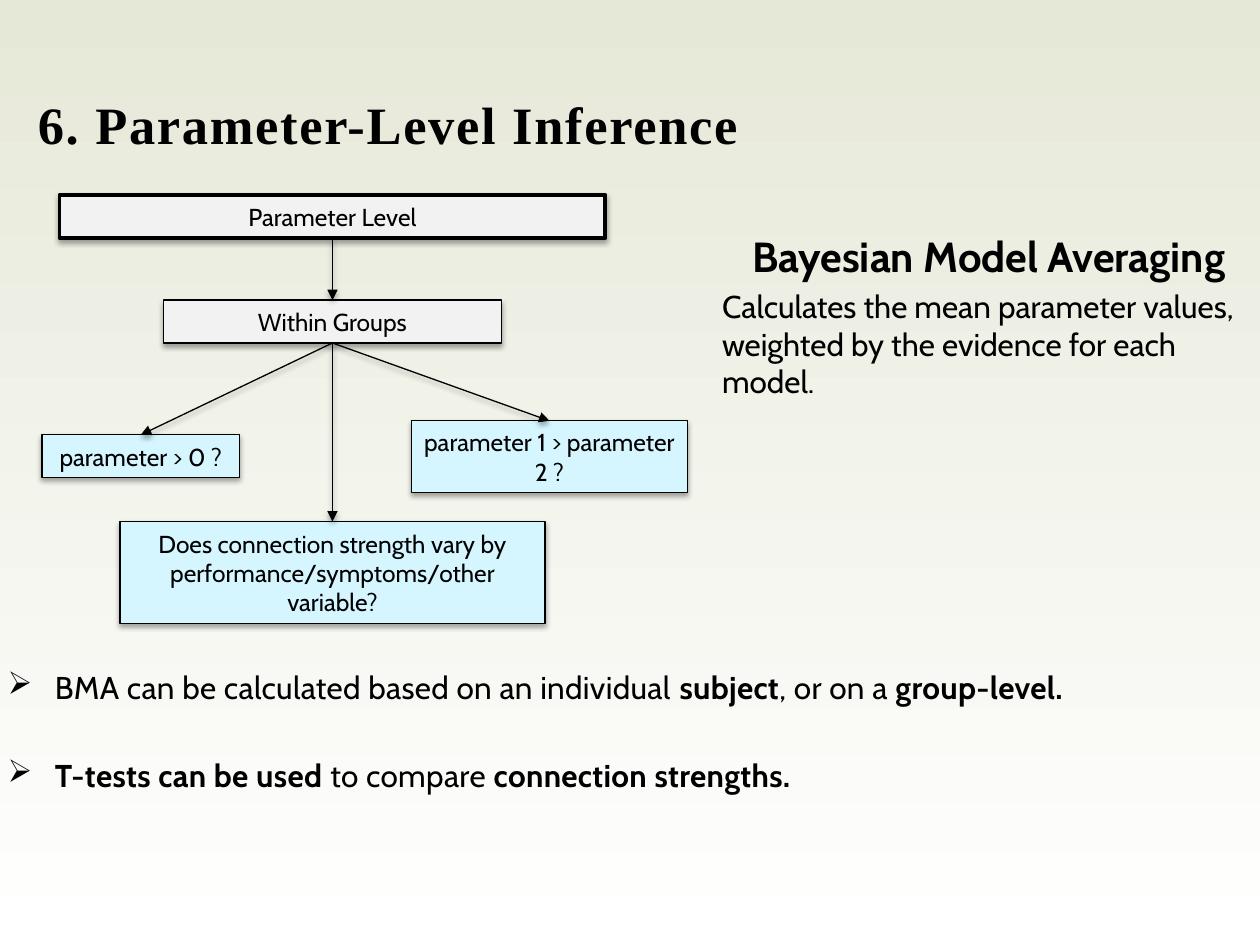
from lxml.etree import SubElement
from pptx import Presentation
from pptx.dml.color import RGBColor as RGB
from pptx.enum.shapes import MSO_CONNECTOR as CONN, MSO_SHAPE as SHAPE
from pptx.enum.text import MSO_ANCHOR as ANCHOR, PP_ALIGN as ALIGN
from pptx.oxml.ns import qn
from pptx.util import Pt

THEME = {
    "ink": RGB.from_string("000000"),
    "grey": RGB.from_string("F2F2F2"),
    "blue": RGB.from_string("D5F5FF"),
    "background": ("E6E8D7", "FFFFFF"),
    "title_font": "Times New Roman",
    "body_font": "Cabin",
    "title": 30,
    "heading": 24,
    "body": 18,
    "label": 14,
}


def add_run(p, text, size, font="body_font", bold=False, spacing=0):
    r = p.add_run()
    r.text = text
    values = {"name": THEME[font], "size": Pt(THEME[size]), "bold": bold}
    for name, value in values.items():
        setattr(r.font, name, value)
    r.font.color.rgb = THEME["ink"]
    if spacing:
        r._r.get_or_add_rPr().set("spc", str(spacing))


def add_shadow(sp):
    effects = SubElement(sp._element.spPr, qn("a:effectLst"))
    shadow = SubElement(effects, qn("a:outerShdw"), blurRad=str(Pt(3.1)), dist=str(Pt(1.8)),
                        dir="5400000", rotWithShape="0")
    color = SubElement(shadow, qn("a:srgbClr"), val=str(THEME["ink"]))
    SubElement(color, qn("a:alpha"), val="35000")


prs = Presentation()
prs.slide_width, prs.slide_height = Pt(720), Pt(540)
s = prs.slides.add_slide(prs.slide_layouts[6])

fill = s.background.fill
fill.gradient()
fill.gradient_angle = 270
for stop, position, color in zip(fill.gradient_stops, (0, 1), THEME["background"]):
    stop.position = position
    stop.color.rgb = RGB.from_string(color)

frames = {}
for name, bounds in {
    "title": (21.6, 52.6, 650, 95),
    "averaging": (412.6, 131.5, 304.6, 134),
    "notes": (4.3, 381.6, 688, 123),
}.items():
    tf = s.shapes.add_textbox(*map(Pt, bounds)).text_frame
    tf.word_wrap = True
    for side in ("left", "top", "right", "bottom"):
        setattr(tf, f"margin_{side}", 0)
    frames[name] = tf

p = frames["title"].paragraphs[0]
add_run(p, "6. Parameter-Level Inference", "title", "title_font", True, 100)

p = frames["averaging"].paragraphs[0]
p.alignment = ALIGN.CENTER
add_run(p, "Bayesian Model Averaging", "heading", bold=True)
p = frames["averaging"].add_paragraph()
p.space_before = Pt(3.6)
add_run(p, "Calculates the mean parameter values, weighted by the evidence for each model.", "body")

notes = [
    [("BMA can be calculated based on an individual ", False), ("subject", True),
     (", or on a ", False), ("group-level.", True)],
    [("T-tests can be used", True), (" to compare ", False), ("connection strengths.", True)],
]
tf = frames["notes"]
for i, parts in enumerate(notes):
    p = tf.add_paragraph() if i else tf.paragraphs[0]
    if i:
        p.space_before = Pt(29)
    pPr = p._p.get_or_add_pPr()
    pPr.set("marL", str(Pt(27)))
    pPr.set("indent", str(Pt(-27)))
    SubElement(pPr, qn("a:buChar"), char="➢")
    for text, bold in parts:
        add_run(p, text, "body", bold=bold, spacing=20)

boxes = {}
for name, text, color, weight, bounds in [
    ("level", "Parameter Level", "grey", 2.25, (34, 111.5, 312, 24.5)),
    ("within", "Within Groups", "grey", 0.75, (93.5, 171.5, 193, 24.5)),
    ("zero", "parameter > 0 ?", "blue", 0.75, (24, 248.5, 113, 24.5)),
    ("pair", "parameter 1 > parameter 2 ?", "blue", 0.75, (235, 240.5, 158, 41)),
    ("vary", "Does connection strength vary by performance/symptoms/other variable?",
     "blue", 0.75, (68.5, 298, 243, 58.5)),
]:
    sp = s.shapes.add_shape(SHAPE.RECTANGLE, *map(Pt, bounds))
    sp.fill.solid()
    sp.fill.fore_color.rgb = THEME[color]
    sp.line.color.rgb = THEME["ink"]
    sp.line.width = Pt(weight)
    add_shadow(sp)
    tf = sp.text_frame
    tf.word_wrap = True
    tf.vertical_anchor = ANCHOR.MIDDLE
    p = tf.paragraphs[0]
    p.alignment = ALIGN.CENTER
    add_run(p, text, "label")
    boxes[name] = sp

for start, end in [("level", "within"), ("within", "zero"), ("within", "pair"), ("within", "vary")]:
    arrow = s.shapes.add_connector(CONN.STRAIGHT, 0, 0, 0, 0)
    arrow.begin_connect(boxes[start], 2)
    arrow.end_connect(boxes[end], 0)
    arrow.line.color.rgb = THEME["ink"]
    arrow.line.width = Pt(0.75)
    SubElement(arrow.line._get_or_add_ln(), qn("a:tailEnd"), type="triangle")
    add_shadow(arrow)

prs.save("out.pptx")
